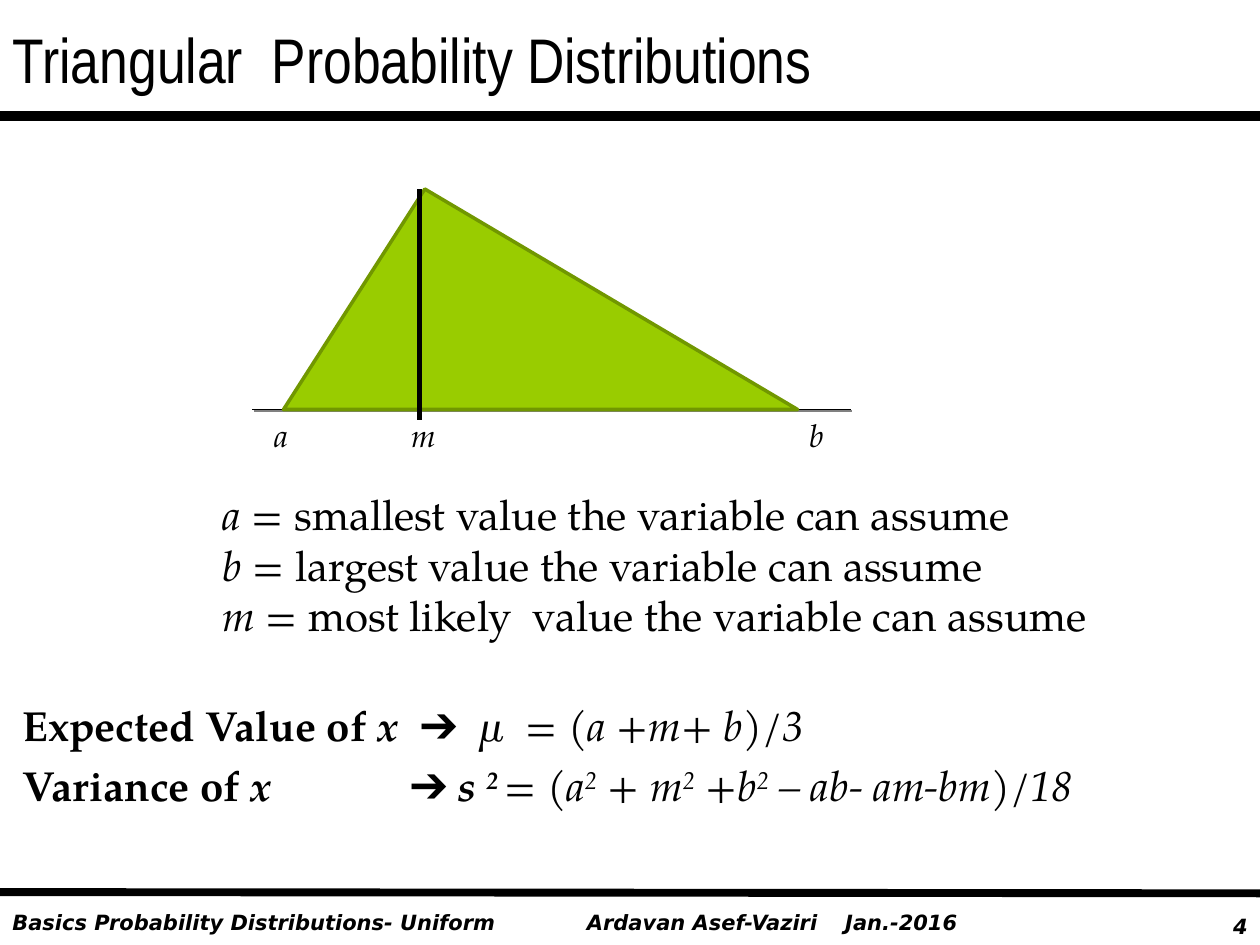
from lxml.etree import SubElement
from pptx import Presentation
from pptx.dml.color import RGBColor
from pptx.enum.shapes import MSO_CONNECTOR, MSO_SHAPE
from pptx.enum.text import MSO_ANCHOR, MSO_AUTO_SIZE, PP_ALIGN
from pptx.oxml.ns import qn
from pptx.util import Inches, Pt

INK = {"text": "000000", "fill": "99CC00", "edge": "719700", "shade": "808080"}
SERIF, SANS = "TeX Gyre Pagella", "DejaVu Sans"


def color(name):
    """Return the named colour."""
    return RGBColor.from_string(INK[name])


def style(run, face, size, marks=""):
    """Format a run; marks may hold b (bold), i (italic) and ^ (superscript)."""
    font = run.font
    font.name, font.size = face, Pt(size)
    font.bold, font.italic = "b" in marks, "i" in marks
    font.color.rgb = color("text")
    if "^" in marks:
        run._r.get_or_add_rPr().set("baseline", "30000")


def set_tab(para, stop):
    """Give a paragraph one left tab stop, in inches."""
    tabs = SubElement(para._p.get_or_add_pPr(), qn("a:tabLst"))
    SubElement(tabs, qn("a:tab"), pos=str(Inches(stop)), algn="l")


def add_text(slide, box, lines, face, size, wrap=True, align=PP_ALIGN.LEFT, gap=0, tabs=()):
    """Add a text box whose lines are lists of (text, marks) pairs."""
    frame = slide.shapes.add_textbox(*map(Inches, box)).text_frame
    frame.word_wrap = wrap
    for i, parts in enumerate(lines):
        para = frame.add_paragraph() if i else frame.paragraphs[0]
        para.alignment, para.space_before = align, Pt(gap)
        if tabs:
            set_tab(para, tabs[i])
        for text, marks in parts:
            run = para.add_run()
            run.text = text
            style(run, face, size, marks)


def add_line(slide, start, end, width, shade=False):
    """Add a straight black line, with a small grey shadow if asked."""
    ends = map(Inches, (*start, *end))
    line = slide.shapes.add_connector(MSO_CONNECTOR.STRAIGHT, *ends)
    line.line.color.rgb, line.line.width = color("text"), Pt(width)
    effects = SubElement(line._element.spPr, qn("a:effectLst"))
    if shade:
        cast = SubElement(effects, qn("a:outerShdw"), dist=str(Pt(1.4)), dir="2700000")
        SubElement(cast, qn("a:srgbClr"), val=INK["shade"])


def add_title(slide, text):
    """Place and format the slide title."""
    title = slide.shapes.title
    title.left, title.top, title.width, title.height = map(Inches, (0, 0, 10, 0.92))
    frame = title.text_frame
    frame.text = text
    frame.auto_size, frame.vertical_anchor = MSO_AUTO_SIZE.NONE, MSO_ANCHOR.MIDDLE
    para = frame.paragraphs[0]
    para.alignment = PP_ALIGN.LEFT
    style(para.runs[0], "Arial Narrow", 36)


def add_footer(slide):
    """Add the two rules and the footer texts."""
    add_line(slide, (0, 0.92), (10, 0.92), 6)
    add_line(slide, (0, 7.08), (10, 7.09), 4.5)
    add_text(slide, (0, 7.17, 4.67, 0.3),
             [[("Basics Probability Distributions- Uniform", "bi")]], SANS, 12)
    add_text(slide, (4.56, 7.17, 3.35, 0.3),
             [[("Ardavan Asef-Vaziri\tJan.-2016", "bi")]], SANS, 12, tabs=[2.05])
    add_text(slide, (9.25, 7.2, 0.75, 0.3), [[("4", "bi")]], SANS, 12, align=PP_ALIGN.RIGHT)


def add_graph(slide):
    """Draw the triangular density over its axis, with labels."""
    add_line(slide, (2, 3.25), (6.75, 3.25), 1, shade=True)
    box = map(Inches, (2.25, 1.5, 4.08, 1.75))
    shape = slide.shapes.add_shape(MSO_SHAPE.ISOSCELES_TRIANGLE, *box)
    shape.adjustments[0] = 0.275
    shape.shadow.inherit = False
    shape.fill.solid()
    shape.fill.fore_color.rgb = color("fill")
    shape.line.color.rgb, shape.line.width = color("edge"), Pt(2)
    add_line(slide, (3.33, 1.5), (3.33, 3.33), 3)
    for name, left, width in (("a", 2.08, 0.31), ("m", 3.17, 0.4), ("b", 6.33, 0.32)):
        add_text(slide, (left, 3.25, width, 0.4), [[(name, "i")]], SERIF, 18, wrap=False)


def main():
    """Build and save the slide."""
    deck = Presentation()
    deck.slide_width, deck.slide_height = Inches(10), Inches(7.5)
    slide = deck.slides.add_slide(deck.slide_layouts[5])
    add_title(slide, "Triangular  Probability Distributions")
    add_footer(slide)
    add_graph(slide)
    terms = (("a", "smallest"), ("b", "largest"), ("m", "most likely "))
    lines = [[(name, "i"), (f" = {kind} value the variable can assume", "")]
             for name, kind in terms]
    add_text(slide, (1.67, 3.83, 7.17, 1.72), lines, SERIF, 24)
    mean = [("Expected Value of ", "b"), ("x\t", "bi"), ("➔  µ  = (a +m+ b)/3", "i")]
    spread = [("Variance of ", "b"), ("x\t", "bi"), ("➔ ", "i"), ("s ", "bi"),
              ("2 ", "bi^"), ("= (a", "i"), ("2", "i^"), (" + m", "i"), ("2", "i^"),
              (" +b", "i"), ("2", "i^"), (" – ab- am-bm)/18", "i")]
    add_text(slide, (0.08, 5.5, 9.5, 1.25), [mean, spread], SERIF, 24,
             gap=5.8, tabs=[3.15, 3.07])
    deck.save("out.pptx")


if __name__ == "__main__":
    main()
